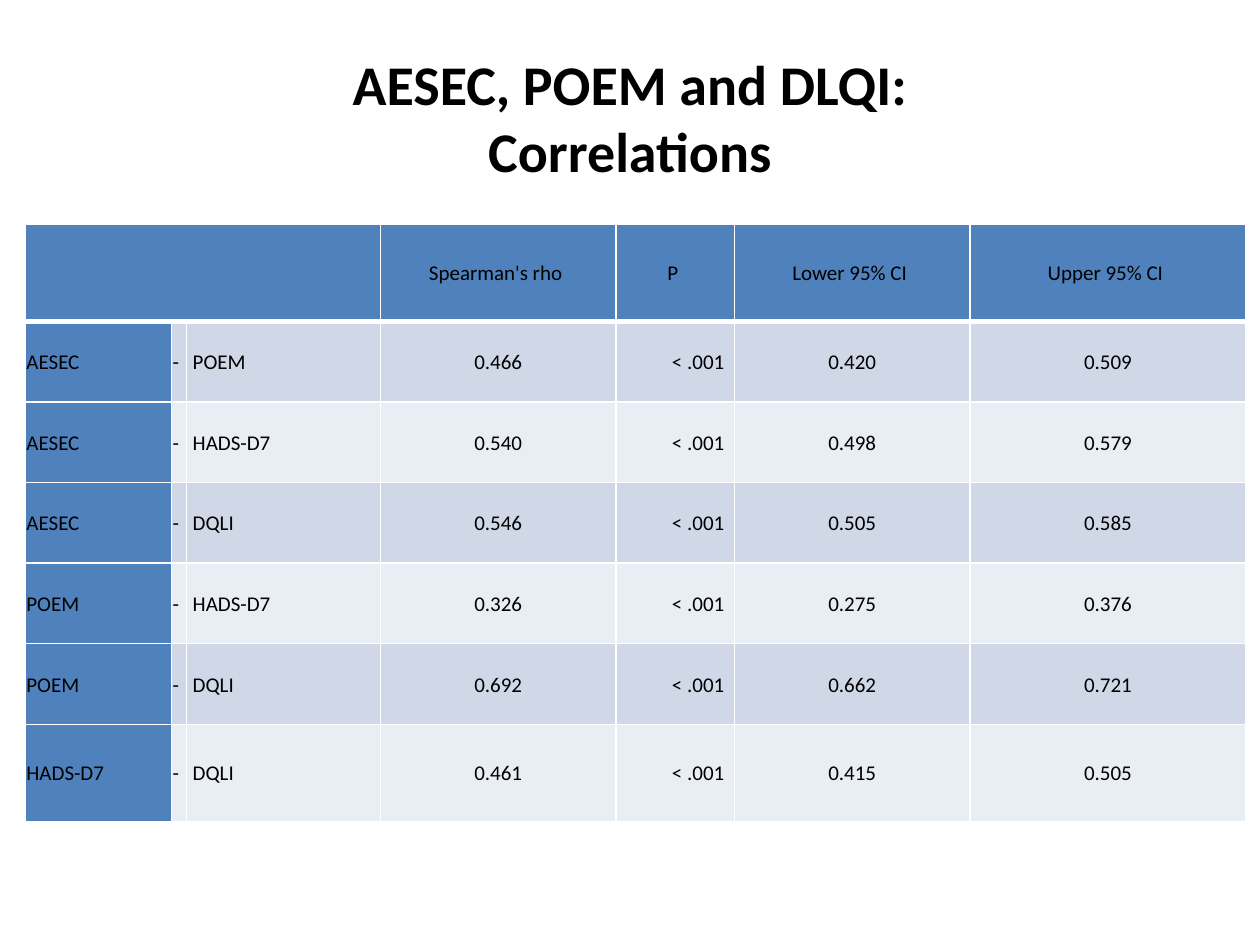
import pptx
import pptx.util
import pptx.dml.color
import pptx.enum.text
import pptx.oxml
import pptx.oxml.ns

BLACK = pptx.dml.color.RGBColor(0x00, 0x00, 0x00)
WHITE = pptx.dml.color.RGBColor(0xFF, 0xFF, 0xFF)
BLUE = pptx.dml.color.RGBColor(0x4F, 0x81, 0xBD)
DARK_BAND = pptx.dml.color.RGBColor(0xD0, 0xD8, 0xE8)
LIGHT_BAND = pptx.dml.color.RGBColor(0xE9, 0xED, 0xF4)

LEFT = pptx.enum.text.PP_ALIGN.LEFT
CENTER = pptx.enum.text.PP_ALIGN.CENTER
RIGHT = pptx.enum.text.PP_ALIGN.RIGHT
MIDDLE = pptx.enum.text.MSO_ANCHOR.MIDDLE

GRID_COLUMNS, GRID_ROWS = 100, 75
COLUMN_WIDTHS = [11.6, 1.2, 15.4, 18.7, 9.4, 18.7, 21.9]
ROW_HEIGHTS = [7.7, 6.4, 6.4, 6.4, 6.4, 6.4, 7.7]
ALIGNMENTS = [LEFT, LEFT, LEFT, CENTER, RIGHT, CENTER, CENTER]
LEFT_INSETS = [0.01, 0.01, 0.05, 0.01, 0.04, 0.01, 0.01]
RIGHT_INSETS = [0.01, 0.01, 0.01, 0.01, 0.08, 0.01, 0.01]
HEADER_INSET = 0.05

HEADINGS = ["", "", "", "Spearman's rho", "P", "Lower 95% CI", "Upper 95% CI"]
CORRELATIONS = [
    ("AESEC", "POEM", "0.466", "0.420", "0.509"),
    ("AESEC", "HADS-D7", "0.540", "0.498", "0.579"),
    ("AESEC", "DQLI", "0.546", "0.505", "0.585"),
    ("POEM", "HADS-D7", "0.326", "0.275", "0.376"),
    ("POEM", "DQLI", "0.692", "0.662", "0.721"),
    ("HADS-D7", "DQLI", "0.461", "0.415", "0.505"),
]


class SlideBuilder:
    title_format = {"name": "Calibri", "size": pptx.util.Pt(32), "bold": True}
    cell_format = {"name": "Calibri", "size": pptx.util.Pt(12), "bold": False}

    def __init__(self, deck):
        self.column = deck.slide_width / GRID_COLUMNS
        self.row = deck.slide_height / GRID_ROWS
        self.slide = deck.slides.add_slide(deck.slide_layouts[5])

    def across(self, columns):
        return round(columns * self.column)

    def down(self, rows):
        return round(rows * self.row)

    def format_font(self, font, values):
        for attribute, value in values.items():
            setattr(font, attribute, value)
        font.color.rgb = BLACK

    def title(self, text, left, top, width, height):
        heading = self.slide.shapes.title
        place = {"left": self.across(left), "top": self.down(top),
                 "width": self.across(width), "height": self.down(height)}
        for attribute, value in place.items():
            setattr(heading, attribute, value)
        heading.text_frame.text = text
        heading.text_frame.vertical_anchor = MIDDLE
        paragraph = heading.text_frame.paragraphs[0]
        paragraph.alignment = CENTER
        for run in paragraph.runs:
            self.format_font(run.font, self.title_format)

    def table(self, rows, left, top):
        table = self.slide.shapes.add_table(
            len(rows), len(COLUMN_WIDTHS), self.across(left), self.down(top),
            self.across(sum(COLUMN_WIDTHS)), self.down(sum(ROW_HEIGHTS))).table
        for column, width in zip(table.columns, COLUMN_WIDTHS):
            column.width = self.across(width)
        for row, height in zip(table.rows, ROW_HEIGHTS):
            row.height = self.down(height)
        for r, texts in enumerate(rows):
            for c, text in enumerate(texts):
                self.cell(table.cell(r, c), text, r, c)
        table.cell(0, 0).merge(table.cell(0, 2))

    def cell(self, cell, text, r, c):
        header = r == 0
        band = DARK_BAND if r % 2 else LIGHT_BAND
        layout = {
            "vertical_anchor": MIDDLE,
            "margin_left": pptx.util.Inches(0.01 if header else LEFT_INSETS[c]),
            "margin_right": pptx.util.Inches(HEADER_INSET if header else RIGHT_INSETS[c]),
            "margin_top": pptx.util.Inches(0.01),
            "margin_bottom": pptx.util.Inches(0.01),
        }
        for attribute, value in layout.items():
            setattr(cell, attribute, value)
        self.borders(cell, 3 if header else 1)
        cell.fill.solid()
        cell.fill.fore_color.rgb = BLUE if header or c == 0 else band
        cell.text = text
        paragraph = cell.text_frame.paragraphs[0]
        paragraph.alignment = CENTER if header else ALIGNMENTS[c]
        paragraph.line_spacing = 1.07
        self.format_font(paragraph.font, self.cell_format)
        for run in paragraph.runs:
            self.format_font(run.font, self.cell_format)

    def borders(self, cell, bottom):
        properties = cell._tc.get_or_add_tcPr()
        for side, points in {"L": 1, "R": 1, "T": 1, "B": bottom}.items():
            properties.append(pptx.oxml.parse_xml(
                f'<a:ln{side} {pptx.oxml.ns.nsdecls("a")} w="{pptx.util.Pt(points)}">'
                f'<a:solidFill><a:srgbClr val="{WHITE}"/></a:solidFill></a:ln{side}>'))


def main():
    deck = pptx.Presentation()
    deck.slide_width = pptx.util.Inches(10)
    deck.slide_height = pptx.util.Inches(7.5)
    builder = SlideBuilder(deck)
    builder.title("AESEC, POEM and DLQI:\vCorrelations", 5, 3, 90, 12.5)
    body = [[first, "-", second, rho, "< .001", lower, upper]
            for first, second, rho, lower, upper in CORRELATIONS]
    builder.table([HEADINGS] + body, 2, 17.8)
    deck.save("out.pptx")


if __name__ == "__main__":
    main()
